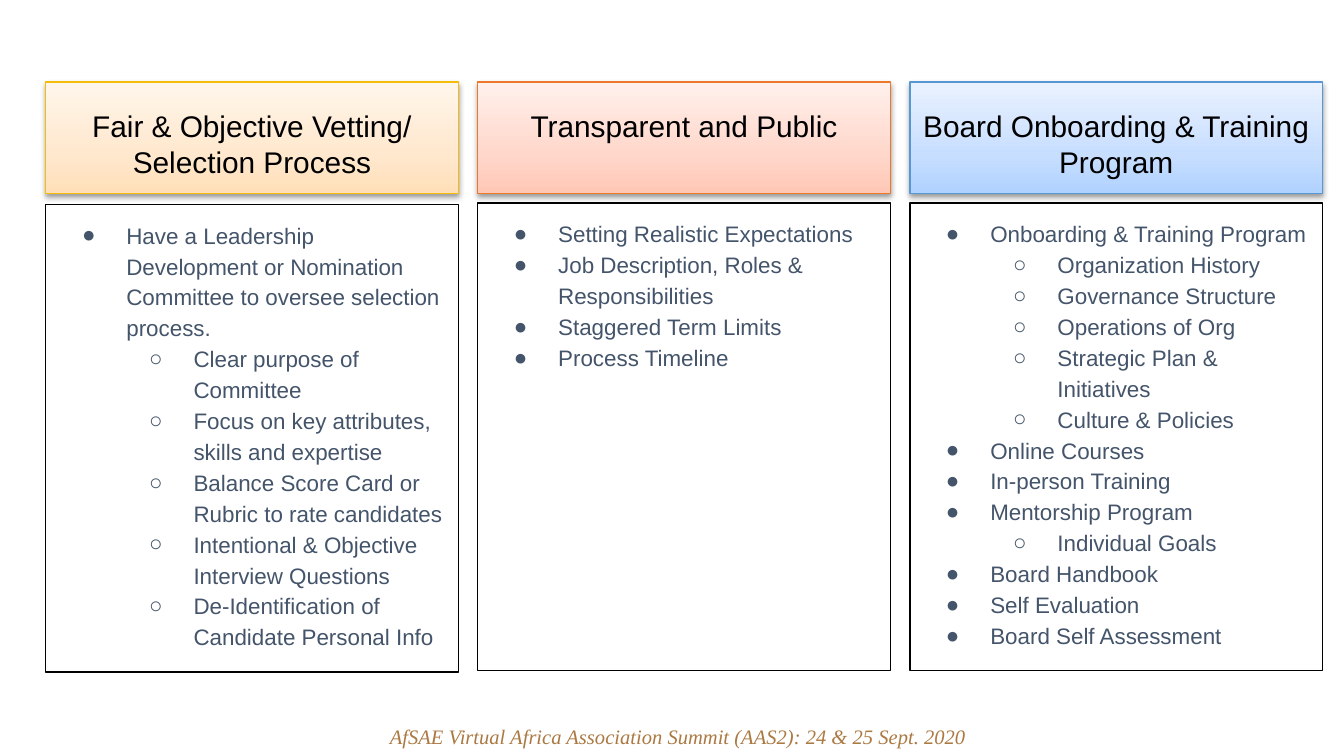
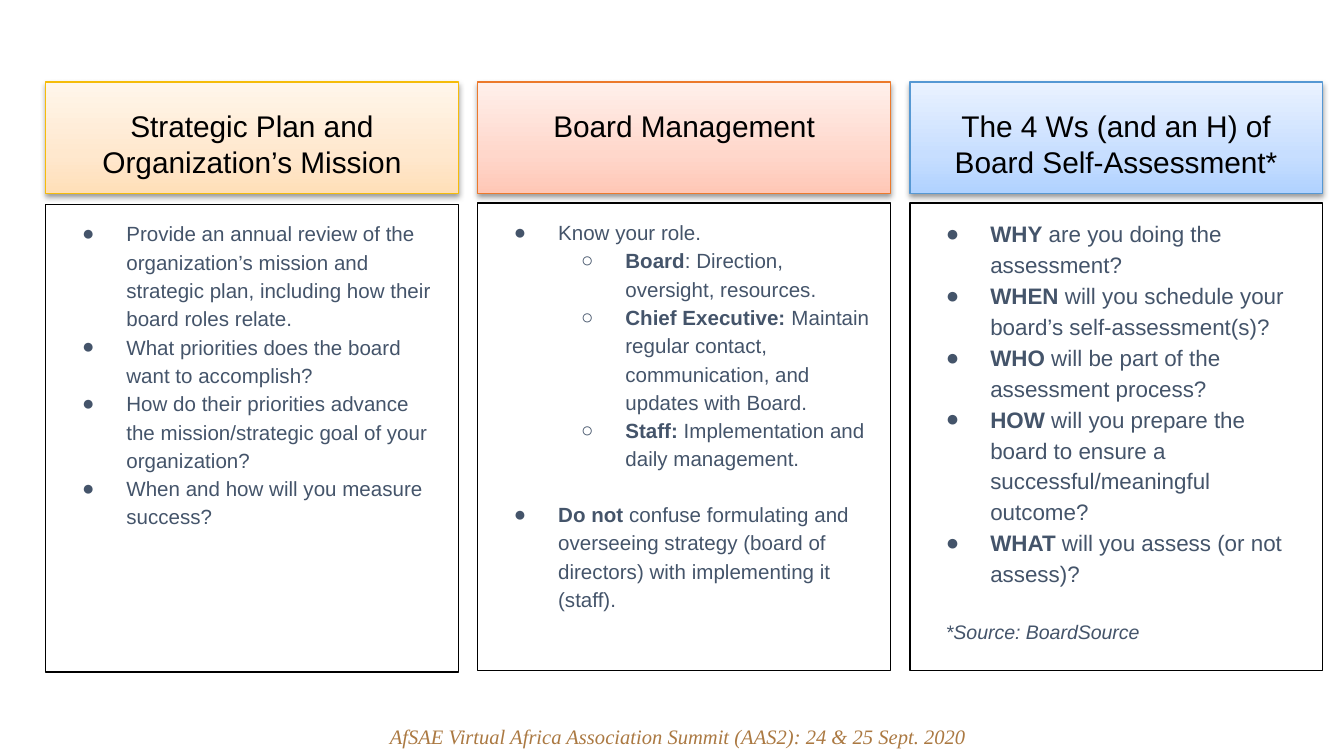
from lxml.etree import SubElement
from pptx import Presentation
from pptx.dml.color import RGBColor
from pptx.enum.shapes import MSO_SHAPE
from pptx.enum.text import MSO_ANCHOR, MSO_AUTO_SIZE, PP_ALIGN
from pptx.oxml.ns import qn
from pptx.util import Inches, Pt

COLORS = {"heading": "000000", "border": "000000", "body": "44546A",
          "footer": "AB7942", "shadow": "000000"}

# Heading looks: border, then gradient stops from bottom to top
HEADING_STYLES = [
    {"border": "F5BC0A", "stops": [(0, "FFDFB8"), (35, "FFE8CE"), (100, "FFF6EB")]},
    {"border": "EC792B", "stops": [(0, "FFC7B6"), (35, "FFD7CB"), (100, "FFF0EB")]},
    {"border": "5698D3", "stops": [(0, "B0D2FF"), (35, "C7DEFF"), (100, "EAF2FF")]},
]

FOOTER = "AfSAE Virtual Africa Association Summit (AAS2): 24 & 25 Sept. 2020"

# Each item: kind, bold lead, rest of the text
MAIN, SUB, MAIN_AFTER_GAP, SOURCE = "main", "sub", "main after gap", "source"

SLIDES = [
    [
        {"heading": "Fair & Objective Vetting/ Selection Process", "size": 12, "items": [
            (MAIN, "", "Have a Leadership Development or Nomination Committee "
                       "to oversee selection process."),
            (SUB, "", "Clear purpose of Committee"),
            (SUB, "", "Focus on key attributes, skills and expertise"),
            (SUB, "", "Balance Score Card or Rubric to rate candidates"),
            (SUB, "", "Intentional & Objective Interview Questions"),
            (SUB, "", "De-Identification of Candidate Personal Info"),
        ]},
        {"heading": "Transparent and Public", "size": 12, "items": [
            (MAIN, "", "Setting Realistic Expectations"),
            (MAIN, "", "Job Description, Roles & Responsibilities"),
            (MAIN, "", "Staggered Term Limits"),
            (MAIN, "", "Process Timeline"),
        ]},
        {"heading": "Board Onboarding & Training Program", "size": 12, "items": [
            (MAIN, "", "Onboarding & Training Program"),
            (SUB, "", "Organization History"),
            (SUB, "", "Governance Structure"),
            (SUB, "", "Operations of Org"),
            (SUB, "", "Strategic Plan & Initiatives"),
            (SUB, "", "Culture & Policies"),
            (MAIN, "", "Online Courses"),
            (MAIN, "", "In-person Training"),
            (MAIN, "", "Mentorship Program"),
            (SUB, "", "Individual Goals"),
            (MAIN, "", "Board Handbook"),
            (MAIN, "", "Self Evaluation"),
            (MAIN, "", "Board Self Assessment"),
        ]},
    ],
    [
        {"heading": "Strategic Plan and Organization’s Mission", "size": 11, "items": [
            (MAIN, "", "Provide an annual review of the organization’s mission and "
                       "strategic plan, including how their board roles relate."),
            (MAIN, "", "What priorities does the board want to accomplish?"),
            (MAIN, "", "How do their priorities advance the mission/strategic goal "
                       "of your organization?"),
            (MAIN, "", "When and how will you measure success?"),
        ]},
        {"heading": "Board Management", "size": 11, "items": [
            (MAIN, "", "Know your role."),
            (SUB, "Board", ": Direction, oversight, resources."),
            (SUB, "Chief Executive: ", "Maintain regular contact, communication, "
                                       "and updates with Board."),
            (SUB, "Staff: ", "Implementation and daily management."),
            (MAIN_AFTER_GAP, "Do not ", "confuse formulating and overseeing strategy (board "
                                        "of directors) with implementing it (staff)."),
        ]},
        {"heading": "The 4 Ws (and an H) of Board Self-Assessment*", "size": 12, "items": [
            (MAIN, "WHY", " are you doing the assessment?"),
            (MAIN, "WHEN", " will you schedule your board’s self-assessment(s)?"),
            (MAIN, "WHO", " will be part of the assessment process?"),
            (MAIN, "HOW", " will you prepare the board to ensure a "
                          "successful/meaningful outcome?"),
            (MAIN, "WHAT", " will you assess (or not assess)?"),
            (SOURCE, "", "*Source: BoardSource"),
        ]},
    ],
]

# Per kind: list level, left margin, first-line indent, bullet, gap above
ITEM_STYLES = {
    MAIN: (0, 0.5, -0.33, "●", False),
    SUB: (1, 1, -0.33, "○", False),
    MAIN_AFTER_GAP: (0, 0.5, -0.33, "●", True),
    SOURCE: (0, 0.17, 0, None, True),
}

COLUMN_LEFT, COLUMN_RIGHT, COLUMN_WIDTH = 0.34, 9.84, 3.07
COLUMN_STEP = (COLUMN_RIGHT - COLUMN_LEFT - COLUMN_WIDTH) / 2
HEADING_TOP, HEADING_HEIGHT, HEADING_INSET = 0.61, 0.83, 0.19
PANEL_TOPS, PANEL_HEIGHT = [1.52, 1.51, 1.51], 3.48
LINE_SPACING = 1.15


def place(shape, left, top, width, height):
    shape.left, shape.top = Inches(left), Inches(top)
    shape.width, shape.height = Inches(width), Inches(height)


def outline(shape, color):
    shape.line.color.rgb = RGBColor.from_string(color)
    shape.line.width = Pt(0.75)


def set_frame(frame, top_inset, right_inset):
    frame.word_wrap = True
    frame.auto_size = MSO_AUTO_SIZE.NONE
    frame.vertical_anchor = MSO_ANCHOR.TOP
    frame.margin_left = frame.margin_bottom = Inches(0.1)
    frame.margin_top, frame.margin_right = Inches(top_inset), Inches(right_inset)


def style_run(run, size, color, font="Arial", bold=False, italic=False):
    run.font.name, run.font.size = font, Pt(size)
    run.font.bold, run.font.italic = bold, italic
    run.font.color.rgb = RGBColor.from_string(color)


def add_color(parent, color):
    return SubElement(parent, qn("a:srgbClr"), val=color)


def shade_heading(shape, stops):
    """Fill with the vertical gradient and cast a soft shadow downwards."""
    shape.fill.gradient()
    shape.fill.gradient_angle = 90
    properties = shape.element.spPr
    stop_list = properties.find(".//" + qn("a:gsLst"))
    for stop in list(stop_list):
        stop_list.remove(stop)
    for position, color in stops:
        add_color(SubElement(stop_list, qn("a:gs"), pos=str(position * 1000)), color)

    shape.shadow.inherit = False
    shadow = SubElement(properties.find(qn("a:effectLst")), qn("a:outerShdw"),
                        blurRad=str(Pt(3.1)), dist=str(Pt(1.6)),
                        dir="5400000", rotWithShape="0")
    SubElement(add_color(shadow, COLORS["shadow"]), qn("a:alpha"), val="38000")


def write_heading(shape, text, style):
    shade_heading(shape, style["stops"])
    outline(shape, style["border"])
    set_frame(shape.text_frame, HEADING_INSET, 0.1)
    shape.text_frame.text = text
    paragraph = shape.text_frame.paragraphs[0]
    paragraph.alignment = PP_ALIGN.CENTER
    style_run(paragraph.runs[0], 16, COLORS["heading"])


def set_bullet(paragraph, margin, indent, bullet):
    properties = paragraph._p.get_or_add_pPr()
    properties.set("marL", str(Inches(margin)))
    properties.set("indent", str(Inches(indent)))
    if bullet:
        add_color(SubElement(properties, qn("a:buClr")), COLORS["body"])
        SubElement(properties, qn("a:buFont"), typeface="Arial")
        SubElement(properties, qn("a:buChar"), char=bullet)
    else:
        SubElement(properties, qn("a:buNone"))


def write_panel(shape, items, size):
    shape.fill.background()
    shape.shadow.inherit = False
    outline(shape, COLORS["border"])
    frame = shape.text_frame
    set_frame(frame, 0.1, 0.11)
    for number, (kind, lead, rest) in enumerate(items):
        level, margin, indent, bullet, gap = ITEM_STYLES[kind]
        paragraph = frame.add_paragraph() if number else frame.paragraphs[0]
        set_bullet(paragraph, margin, indent, bullet)
        paragraph.level = level
        paragraph.alignment = PP_ALIGN.LEFT
        paragraph.line_spacing = LINE_SPACING
        paragraph.space_before = Pt(round(size * LINE_SPACING ** 2, 1) if gap else 0)
        paragraph.space_after = Pt(0)
        for text, bold in ((lead, True), (rest, False)):
            if text:
                run = paragraph.add_run()
                run.text = text
                is_source = kind == SOURCE
                style_run(run, 10.5 if is_source else size, COLORS["body"],
                          bold=bold, italic=is_source)


def add_footer(slide):
    footer = slide.shapes.add_textbox(Inches(2.69), Inches(5.33), Inches(4.71), Inches(0.3))
    frame = footer.text_frame
    frame.word_wrap = True
    frame.vertical_anchor = MSO_ANCHOR.MIDDLE
    frame.text = FOOTER
    frame.paragraphs[0].alignment = PP_ALIGN.CENTER
    style_run(frame.paragraphs[0].runs[0], 11, COLORS["footer"], "Times New Roman", italic=True)


def add_rectangle(slide):
    return slide.shapes.add_shape(MSO_SHAPE.RECTANGLE, 0, 0, 0, 0)


def build_slide(deck, columns):
    slide = deck.slides.add_slide(deck.slide_layouts[1])
    for number, column in enumerate(columns):
        if number == 0:
            heading, panel = slide.shapes.title, slide.placeholders[1]
        else:
            heading, panel = add_rectangle(slide), add_rectangle(slide)
        left = COLUMN_LEFT + number * COLUMN_STEP
        place(heading, left, HEADING_TOP, COLUMN_WIDTH, HEADING_HEIGHT)
        place(panel, left, PANEL_TOPS[number], COLUMN_WIDTH, PANEL_HEIGHT)
        write_heading(heading, column["heading"], HEADING_STYLES[number])
        write_panel(panel, column["items"], column["size"])
    add_footer(slide)


def main():
    deck = Presentation()
    deck.slide_width = Inches(10)
    deck.slide_height = deck.slide_width * 9 // 16
    for columns in SLIDES:
        build_slide(deck, columns)
    deck.save("out.pptx")


if __name__ == "__main__":
    main()
